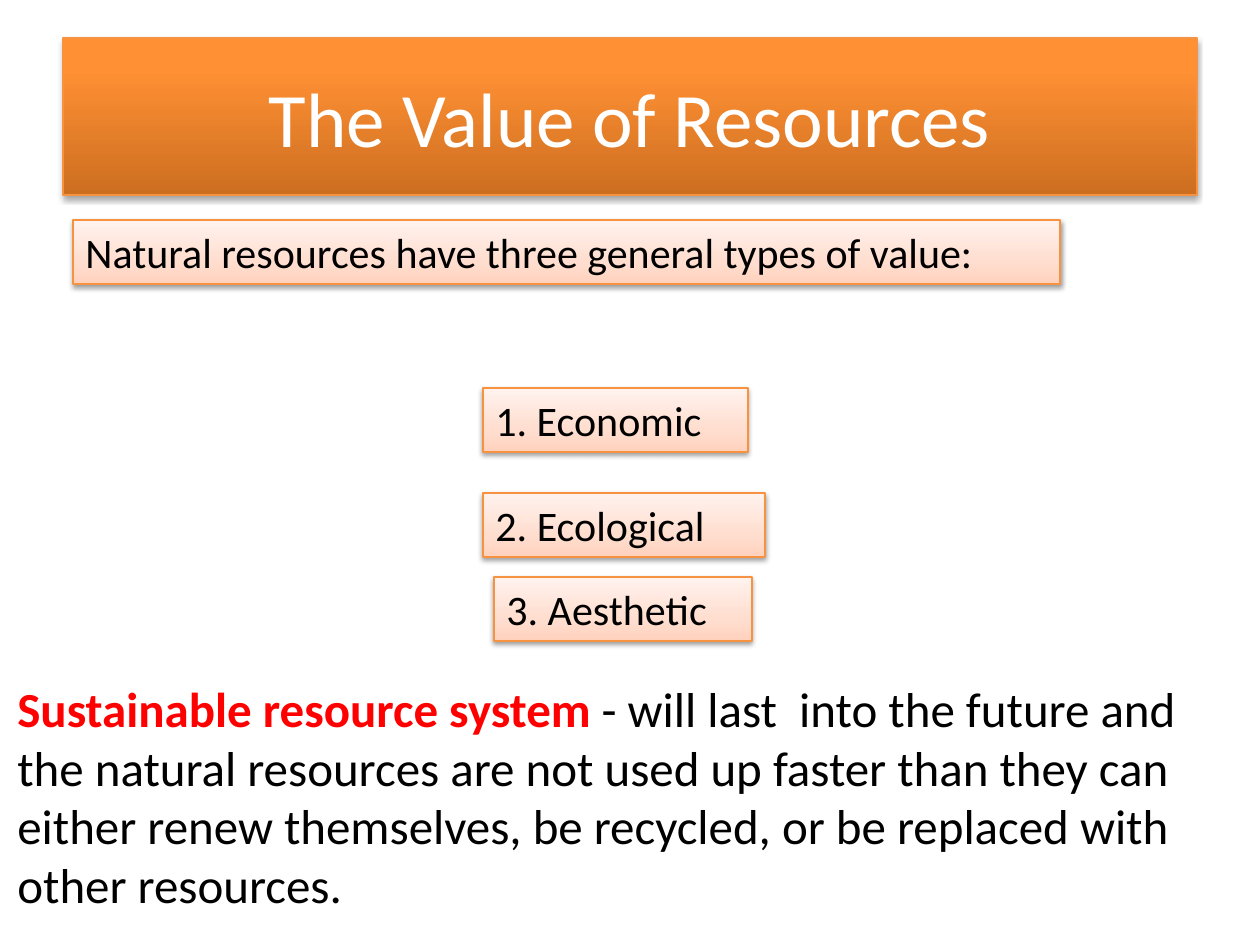
from lxml import etree
from pptx import Presentation
from pptx import util as u
from pptx.dml.color import RGBColor
from pptx.enum import shapes, text
from pptx.oxml import ns

PX = 914400 / 126  # EMU in one px

BLACK = RGBColor(0x00, 0x00, 0x00)
WHITE = RGBColor(0xFF, 0xFF, 0xFF)
RED = RGBColor(0xFF, 0x00, 0x00)
EDGE = RGBColor(0xF6, 0x92, 0x40)

# Gradient stops from bottom to top: percent, colour
ORANGE = [(0, RGBColor(0xCC, 0x6E, 0x20)), (80, RGBColor(0xFF, 0x90, 0x34)),
          (100, RGBColor(0xFF, 0x91, 0x36))]
PEACH = [(0, RGBColor(0xFF, 0xD2, 0xBD)), (35, RGBColor(0xFF, 0xDE, 0xD0)),
         (100, RGBColor(0xFF, 0xF2, 0xED))]


def emu(*lengths):
    return [u.Emu(round(length * PX)) for length in lengths]


def add_xml(parent, tag, **attributes):
    return etree.SubElement(parent, ns.qn(tag), attributes)


def add_color(parent, color):
    return add_xml(parent, "a:srgbClr", val=str(color))


def fill_gradient(shape, stops):
    shape.fill.gradient()
    shape.fill.gradient_angle = 90
    stop_list = shape._element.spPr.find(".//" + ns.qn("a:gsLst"))
    for old_stop in list(stop_list):
        stop_list.remove(old_stop)
    for percent, color in stops:
        add_color(add_xml(stop_list, "a:gs", pos=str(percent * 1000)), color)


def add_shadow(shape, opacity, distance):
    shape.shadow.inherit = False
    effects = shape._element.spPr.find(ns.qn("a:effectLst"))
    shadow = add_xml(effects, "a:outerShdw", blurRad=str(u.Pt(3.1)),
                     dist=str(u.Pt(distance)), dir="5400000", rotWithShape="0")
    add_xml(add_color(shadow, BLACK), "a:alpha", val=str(opacity * 1000))


def set_font(font, size, color):
    font.name = "Calibri"
    font.size = u.Pt(size)
    font.color.rgb = color


def add_panel(page, box, words, stops, size, color, align, anchor, opacity, distance):
    panel = page.shapes.add_shape(shapes.MSO_SHAPE.RECTANGLE, *emu(*box))
    fill_gradient(panel, stops)
    panel.line.color.rgb = EDGE
    panel.line.width = u.Pt(0.75)
    add_shadow(panel, opacity, distance)
    frame = panel.text_frame
    frame.word_wrap = True
    frame.vertical_anchor = anchor
    para = frame.paragraphs[0]
    para.text = words
    para.alignment = align
    set_font(para.font, size, color)


def add_title(page, box, words):
    add_panel(page, box, words, ORANGE, 44, WHITE, text.PP_ALIGN.CENTER,
              text.MSO_ANCHOR.MIDDLE, 35, 1.8)


def add_label(page, box, words):
    add_panel(page, box, words, PEACH, 24, BLACK, text.PP_ALIGN.LEFT,
              text.MSO_ANCHOR.TOP, 38, 1.6)


def add_values(page, box, values):
    """Labels placed by their offset inside the box."""
    left, top, height = box
    for dx, dy, width, words in values:
        add_label(page, (left + dx, top + dy, width, height), words)


def add_definition(page, box, term, meaning):
    frame = page.shapes.add_textbox(*emu(*box)).text_frame
    frame.word_wrap = True
    para = frame.paragraphs[0]
    for words, color, bold in ((term, RED, True), (meaning, BLACK, False)):
        span = para.add_run()
        span.text = words
        set_font(span.font, 28, color)
        span.font.bold = bold


def main():
    deck = Presentation()
    deck.slide_width, deck.slide_height = emu(1260, 945)
    page = deck.slides.add_slide(deck.slide_layouts[6])

    # Heading and introduction
    add_title(page, (63, 38, 1134, 157), "The Value of Resources")
    add_label(page, (73, 220, 987, 64),
              "Natural resources have three general types of value:")

    # Three types of value
    add_values(page, (483, 388, 64), [
        (0, 0, 265, "1. Economic"),
        (0, 105, 282, "2. Ecological"),
        (11, 189, 258, "3. Aesthetic"),
    ])

    # Definition
    add_definition(page, (5, 672, 1197, 251), "Sustainable resource system ",
                   "- will last  into the future and the natural resources are "
                   "not used up faster than they can either renew themselves, "
                   "be recycled, or be replaced with other resources.")

    deck.save("out.pptx")


if __name__ == "__main__":
    main()
